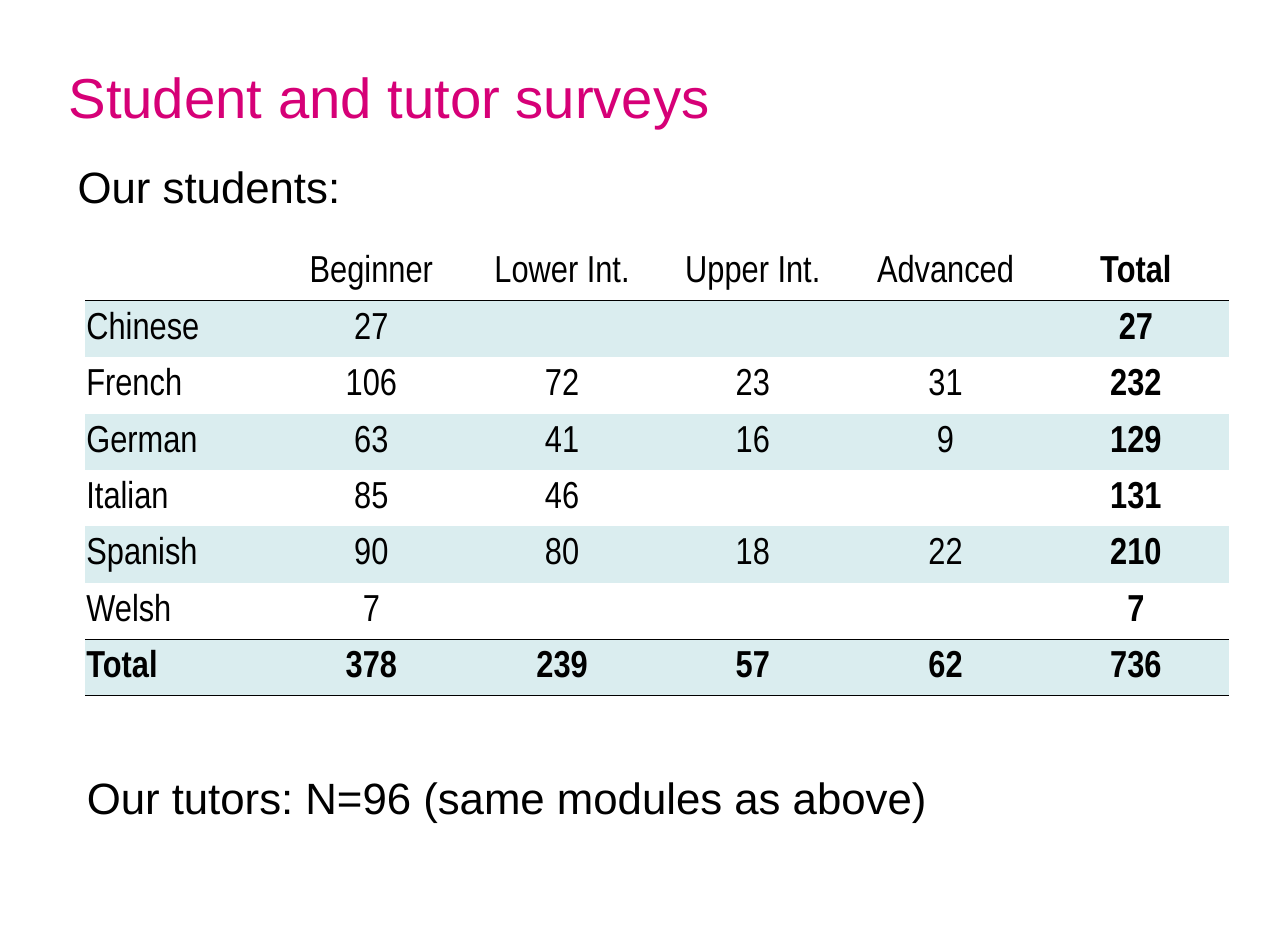
from lxml.etree import SubElement
from pptx import Presentation
from pptx.dml.color import RGBColor
from pptx.enum.text import MSO_ANCHOR as Anchor, PP_ALIGN as Align
from pptx.oxml.ns import qn
from pptx.util import Pt

COLORS = {"heading": "D60077", "ink": "000000", "band": "DAEDEF"}
COLUMN_WIDTHS = [122, 122, 122, 122, 124.5, 119]
SURVEY = [
    ["", "Beginner", "Lower Int.", "Upper Int.", "Advanced", "Total"],
    ["Chinese", "27", "", "", "", "27"],
    ["French", "106", "72", "23", "31", "232"],
    ["German", "63", "41", "16", "9", "129"],
    ["Italian", "85", "46", "", "", "131"],
    ["Spanish", "90", "80", "18", "22", "210"],
    ["Welsh", "7", "", "", "", "7"],
    ["Total", "378", "239", "57", "62", "736"],
]


def rgb(key):
    return RGBColor.from_string(COLORS[key])


def style(paragraph, font_name, size, color="ink", bold=False):
    for run in paragraph.runs:
        run.font.name = font_name
        run.font.size = Pt(size)
        run.font.bold = bold
        run.font.color.rgb = rgb(color)


def add_line(slide, box, wording, size, color="ink"):
    frame = slide.shapes.add_textbox(*map(Pt, box)).text_frame
    frame.word_wrap = True
    frame.margin_left = frame.margin_right = Pt(6.5)
    frame.margin_top = frame.margin_bottom = Pt(3.2)
    frame.text = wording
    style(frame.paragraphs[0], "Arial", size, color)
    return frame


def add_heading(slide, box):
    heading = add_line(slide, box, "Student and tutor surveys", 36, "heading")
    heading.vertical_anchor = Anchor.MIDDLE


def add_group_label(slide, box, wording):
    paragraph = add_line(slide, box, wording, 28).paragraphs[0]
    paragraph.space_before = Pt(5.6)
    properties = paragraph._p.get_or_add_pPr()
    properties.set("marL", str(Pt(24)))
    properties.set("indent", str(Pt(-24)))


def set_borders(cell, ruled_sides):
    properties = cell._tc.get_or_add_tcPr()
    for position, side in enumerate("LRTB"):
        border = SubElement(properties, qn(f"a:ln{side}"), w=str(Pt(1)))
        properties.insert(position, border)
        if side in ruled_sides:
            fill = SubElement(border, qn("a:solidFill"))
            SubElement(fill, qn("a:srgbClr"), val=COLORS["ink"])
        else:
            SubElement(border, qn("a:noFill"))


def fill_cell(cell, wording, centred, bold):
    cell.vertical_anchor = Anchor.MIDDLE
    cell.margin_left = cell.margin_right = cell.margin_top = Pt(0.75)
    cell.margin_bottom = 0
    cell.text = wording
    paragraph = cell.text_frame.paragraphs[0]
    paragraph.alignment = Align.CENTER if centred else Align.LEFT
    paragraph.space_before = paragraph.space_after = Pt(6)
    style(paragraph, "Arial Narrow", 24, bold=bold)


def add_survey_table(slide, box):
    last_row, last_column = len(SURVEY) - 1, len(COLUMN_WIDTHS) - 1
    table = slide.shapes.add_table(
        len(SURVEY), len(COLUMN_WIDTHS), *map(Pt, box)).table
    table.first_row = table.horz_banding = False
    for column, width in zip(table.columns, COLUMN_WIDTHS):
        column.width = Pt(width)
    for r, record in enumerate(SURVEY):
        table.rows[r].height = Pt(box[3] / len(SURVEY))
        ruled_sides = "T" if r in (1, last_row) else ""
        ruled_sides += "B" if r in (0, last_row - 1, last_row) else ""
        for c, wording in enumerate(record):
            cell = table.cell(r, c)
            if wording:
                fill_cell(cell, wording, c > 0, r == last_row or c == last_column)
            if r % 2:
                cell.fill.solid()
                cell.fill.fore_color.rgb = rgb("band")
            else:
                cell.fill.background()
            set_borders(cell, ruled_sides)


def main():
    deck = Presentation()
    deck.slide_width, deck.slide_height = Pt(823.7), Pt(595.4)
    slide = deck.slides.add_slide(deck.slide_layouts[6])
    add_heading(slide, (37.4, 36.7, 572.4, 49))
    add_survey_table(slide, (54.5, 156.2, sum(COLUMN_WIDTHS), 288.8))
    add_group_label(slide, (43.2, 99.1, 181.4, 40.3), "Our students:")
    add_group_label(slide, (49, 489.6, 635, 40.3),
                    "Our tutors: N=96 (same modules as above)")
    deck.save("out.pptx")


if __name__ == "__main__":
    main()
